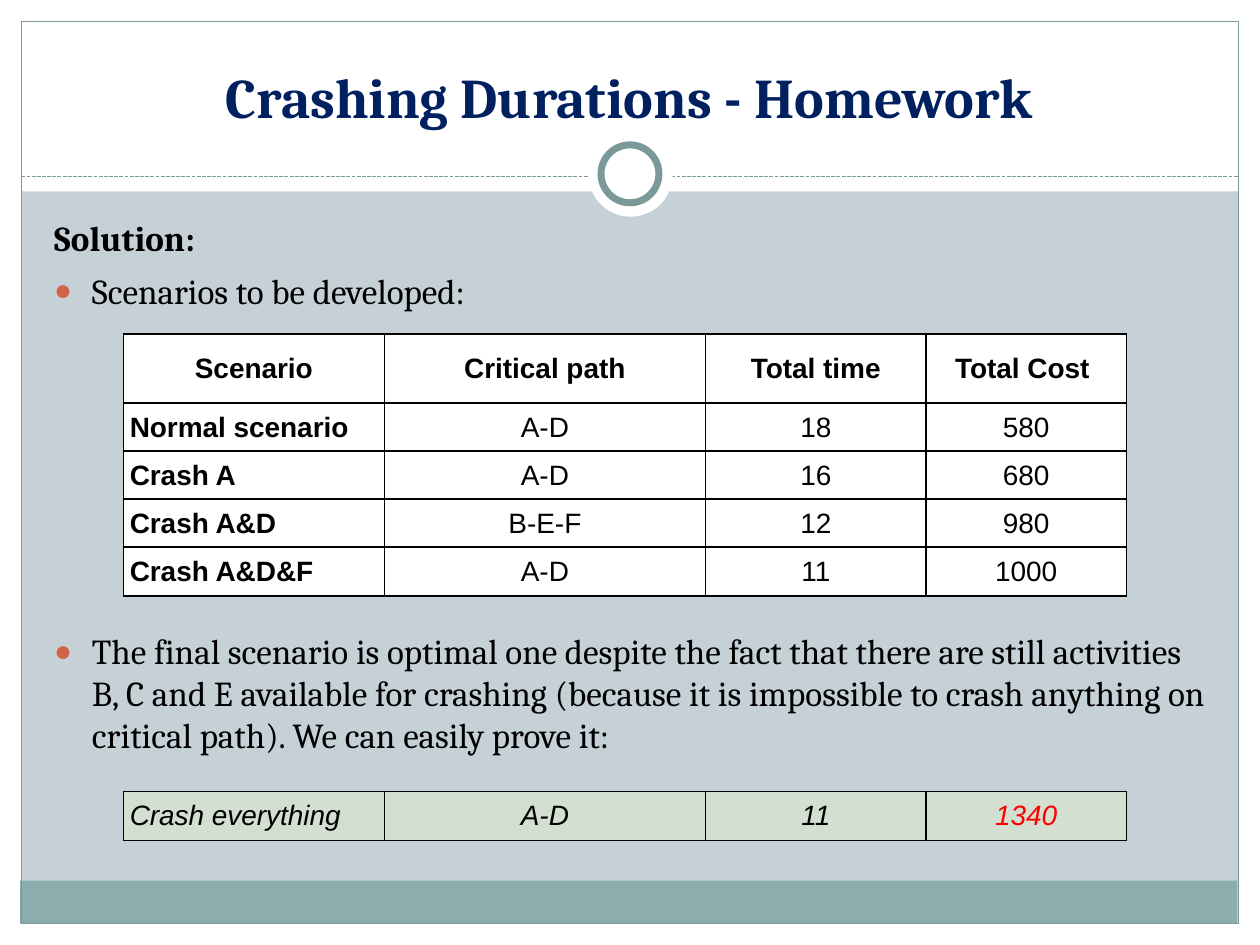
"""Build the slide on crashing durations."""
from dataclasses import dataclass

from lxml.etree import SubElement
from pptx import Presentation
from pptx.dml.color import RGBColor as Rgb
from pptx.enum.dml import MSO_LINE as Dash
from pptx.enum.shapes import MSO_CONNECTOR as Link, MSO_SHAPE as Kind
from pptx.enum.text import MSO_ANCHOR as Anchor, MSO_AUTO_SIZE as Fit, PP_ALIGN as Align
from pptx.oxml.ns import qn
from pptx.util import Inches, Pt


@dataclass(frozen=True)
class Theme:
    """Colours, fonts and type sizes of the slide."""
    back: str = "C5D1D7"
    white: str = "FFFFFF"
    black: str = "000000"
    band: str = "8CADAE"
    edge: str = "7C999A"
    title: str = "002060"
    bullet: str = "D16349"
    proof: str = "D2DFD1"
    alert: str = "FF0000"
    serif: str = "Cambria"
    sans: str = "Arial"
    head: int = 32
    text: int = 20
    cell: int = 16


THEME = Theme()
LEFT = 0.98
WIDTHS = (2.07, 2.55, 1.75, 1.59)
TALL, ROW, PITCH = 0.55, 0.39, 0.38
START = 3.58
STEPS = [
    ("Crash A", "A-D", "16", "680"),
    ("Crash A&D", "B-E-F", "12", "980"),
    ("Crash A&D&F", "A-D", "11", "1000"),
]


def color(name):
    """Return a colour object for a hex value."""
    return Rgb.from_string(name)


def style(font, face, size, tint, bold=False, italic=False):
    """Set every property of a font."""
    font.name, font.size = face, Pt(size)
    font.color.rgb = color(tint)
    font.bold, font.italic = bold, italic


def shape(slide, kind, box, fill=None, line=None, width=0.75):
    """Add a flat preset shape."""
    item = slide.shapes.add_shape(kind, *map(Inches, box))
    item.shadow.inherit = False
    if fill:
        item.fill.solid()
        item.fill.fore_color.rgb = color(fill)
    else:
        item.fill.background()
    if line:
        item.line.color.rgb = color(line)
        item.line.width = Pt(width)
    else:
        item.line.fill.background()


def rule(slide, start, end, top):
    """Add a dashed level line."""
    item = slide.shapes.add_connector(
        Link.STRAIGHT, Inches(start), Inches(top), Inches(end), Inches(top))
    item.line.color.rgb = color(THEME.edge)
    item.line.width = Pt(0.75)
    item.line.dash_style = Dash.SQUARE_DOT
    SubElement(item._element.spPr, qn("a:effectLst"))


def frame(slide):
    """Draw the margins, the bottom band, the border and the ring."""
    for box in ((0, 7.33, 10, 0.17), (0, 0, 10, 1.52),
                (0, 0, 0.17, 7.5), (9.83, 0, 0.17, 7.5)):
        shape(slide, Kind.RECTANGLE, box, THEME.white)
    shape(slide, Kind.RECTANGLE, (0.16, 6.99, 9.66, 0.34), THEME.band)
    shape(slide, Kind.RECTANGLE, (0.17, 0.17, 9.66, 7.16), line=THEME.edge)
    rule(slide, 0.17, 9.83, 1.4)
    shape(slide, Kind.OVAL, (4.67, 1.05, 0.67, 0.67), THEME.white)
    shape(slide, Kind.OVAL, (4.77, 1.15, 0.46, 0.46), THEME.white, THEME.edge, 4)


def place(slide, holder, box, anchor):
    """Move a placeholder to the front and into its box."""
    holder.left, holder.top, holder.width, holder.height = map(Inches, box)
    slide.shapes._spTree.append(holder._element)
    text = holder.text_frame
    text.word_wrap, text.auto_size = True, Fit.NONE
    text.vertical_anchor = anchor
    return text


def heading(slide, words):
    """Fill the title placeholder."""
    text = place(slide, slide.shapes.title, (0.33, 0.25, 9.33, 0.83), Anchor.BOTTOM)
    text.text = words
    para = text.paragraphs[0]
    para.alignment = Align.CENTER
    style(para.font, THEME.serif, THEME.head, THEME.title, bold=True)


def bullet(para, mark):
    """Set the bullet and hanging indent, or clear both."""
    props = para._p.get_or_add_pPr()
    indent = Inches(0.3) if mark else 0
    props.set("marL", str(indent))
    props.set("indent", str(-indent))
    if not mark:
        SubElement(props, qn("a:buNone"))
        return
    tint = SubElement(props, qn("a:buClr"))
    SubElement(tint, qn("a:srgbClr"), val=THEME.bullet)
    SubElement(props, qn("a:buSzPct"), val="85000")
    SubElement(props, qn("a:buFont"), typeface=THEME.sans)
    SubElement(props, qn("a:buChar"), char=mark)


def body(slide, items):
    """Fill the body placeholder from words, mark and spacing."""
    text = place(slide, slide.placeholders[1], (0.33, 1.67, 9.36, 5), Anchor.TOP)
    text.text = "\n".join(words for words, *_ in items)
    for para, (_, mark, before, after) in zip(text.paragraphs, items):
        para.alignment = Align.LEFT
        para.space_before, para.space_after = Pt(before), Pt(after)
        bullet(para, mark)
        style(para.font, THEME.serif, THEME.text, THEME.black, bold=not mark)


def border(cell):
    """Draw a thin black line on each side of a cell."""
    props = cell._tc.get_or_add_tcPr()
    for side in ("lnL", "lnR", "lnT", "lnB"):
        line = SubElement(props, qn(f"a:{side}"), w=str(Pt(1)))
        fill = SubElement(line, qn("a:solidFill"))
        SubElement(fill, qn("a:srgbClr"), val=THEME.black)


def entry(cell, words, fill, align, **look):
    """Fill and format one table cell."""
    border(cell)
    cell.fill.solid()
    cell.fill.fore_color.rgb = color(fill)
    cell.vertical_anchor = Anchor.MIDDLE
    cell.margin_left = cell.margin_right = Inches(0.05)
    cell.margin_top = cell.margin_bottom = 0
    cell.text = words
    para = cell.text_frame.paragraphs[0]
    para.alignment = align
    style(para.font, THEME.sans, THEME.cell, **look)


def grid(slide, top, rows, header=False, proof=False):
    """Add a table with an optional header, or as the closing proof."""
    highs = [TALL if header and not at else ROW for at in range(len(rows))]
    table = slide.shapes.add_table(
        len(rows), len(WIDTHS), Inches(LEFT), Inches(top),
        Inches(sum(WIDTHS)), Inches(sum(highs))).table
    table.first_row = table.horz_banding = False
    for column, width in zip(table.columns, WIDTHS):
        column.width = Inches(width)
    for y, (row, high) in enumerate(zip(rows, highs)):
        table.rows[y].height = Inches(high)
        top_row = header and y == 0
        for x, words in enumerate(row):
            last = x == len(row) - 1
            entry(table.cell(y, x), words,
                  THEME.proof if proof else THEME.white,
                  Align.CENTER if x or top_row else Align.LEFT,
                  tint=THEME.alert if proof and last else THEME.black,
                  bold=not proof and (top_row or x == 0), italic=proof)


def main():
    """Build and save the slide."""
    deck = Presentation()
    deck.slide_width, deck.slide_height = Inches(10), Inches(7.5)
    slide = deck.slides.add_slide(deck.slide_layouts[1])
    slide.background.fill.solid()
    slide.background.fill.fore_color.rgb = color(THEME.back)
    frame(slide)
    heading(slide, "Crashing Durations - Homework")
    body(slide, [
        ("Solution:", None, 0, 6),
        ("Scenarios to be developed:", "●", 0, 12),
        ("The final scenario is optimal one despite the fact that there are "
         "still activities B, C and E available for crashing (because it is "
         "impossible to crash anything on critical path). We can easily "
         "prove it:", "●", 170, 12),
    ])
    grid(slide, 2.65, [("Scenario", "Critical path", "Total time", "Total Cost "),
                       ("Normal scenario", "A-D", "18", "580")], header=True)
    grid(slide, 6.28, [("Crash everything", "A-D", "11", "1340")], proof=True)
    for at, step in enumerate(STEPS):
        grid(slide, START + at * PITCH, [step])
    deck.save("out.pptx")


if __name__ == "__main__":
    main()
